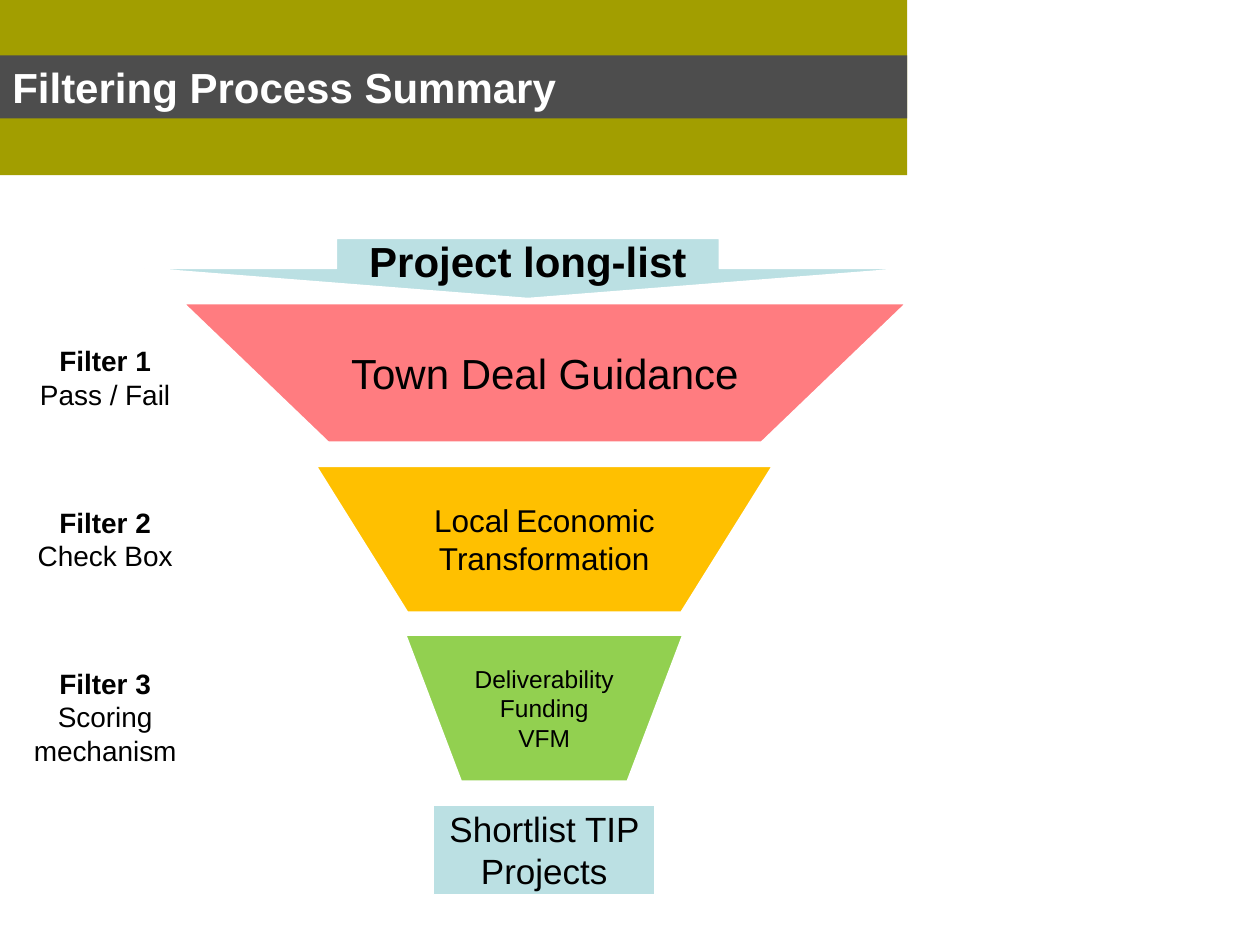
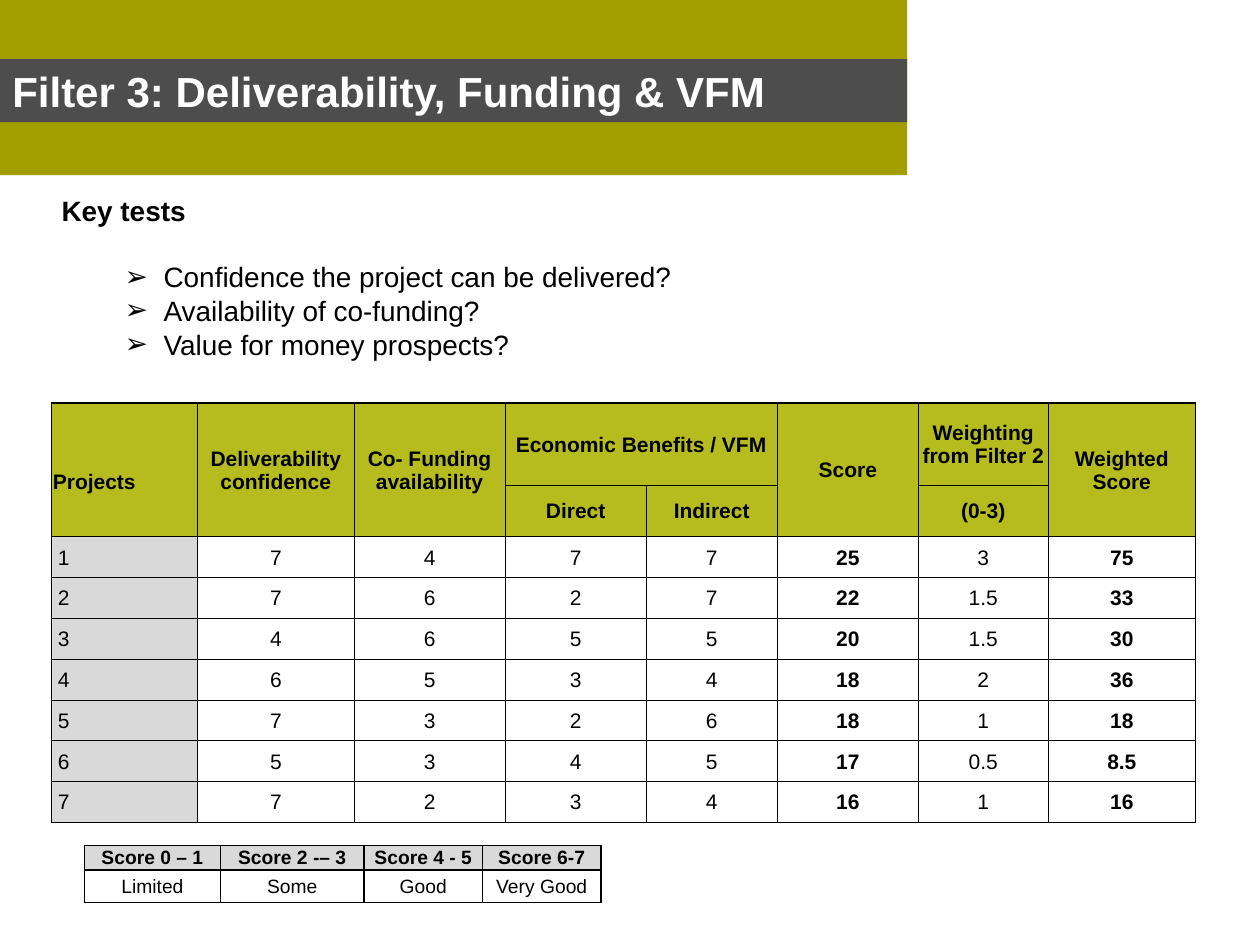
from lxml import etree
from pptx import Presentation
from pptx.dml.color import RGBColor
from pptx.enum.shapes import MSO_SHAPE
from pptx.enum.text import MSO_ANCHOR, PP_ALIGN
from pptx.oxml.ns import qn
from pptx.util import Inches, Pt

RECT, ARROW = MSO_SHAPE.RECTANGLE, MSO_SHAPE.DOWN_ARROW
FUNNEL = MSO_SHAPE.FLOWCHART_MANUAL_OPERATION
LEFT, CENTER = PP_ALIGN.LEFT, PP_ALIGN.CENTER
TOP, MIDDLE = MSO_ANCHOR.TOP, MSO_ANCHOR.MIDDLE

FONT = "Arial"
BLACK, WHITE = RGBColor(0, 0, 0), RGBColor(255, 255, 255)
OLIVE, CHARCOAL = RGBColor(0xA2, 0x9E, 0x00), RGBColor(0x4D, 0x4D, 0x4D)
PALE_BLUE, PINK = RGBColor(0xBB, 0xE0, 0xE3), RGBColor(0xFF, 0x7C, 0x80)
AMBER, GREEN = RGBColor(0xFF, 0xC0, 0x00), RGBColor(0x92, 0xD0, 0x50)
LIME, GREY = RGBColor(0xB6, 0xBC, 0x1E), RGBColor(0xD9, 0xD9, 0xD9)

SLIDE_W, SLIDE_H = 10, 7.5
BAND_W, BAND_H, TITLE_H = 0.72 * SLIDE_W, 1.39, 0.5

# Content of the funnel slide: kind, place, fill, paragraphs, size, bold
STAGES = [
    (ARROW, (1.15, 1.89, 6.08, 0.48), PALE_BLUE, ["Project long-list"], 24, True),
    (FUNNEL, (1.46, 2.41, 5.73, 1.1), PINK, ["Town Deal Guidance"], 24, False),
    (FUNNEL, (2.51, 3.7, 3.62, 1.16), AMBER,
     [[("Local", {}), (" ", {"size": 14}), ("Economic Transformation", {})]], 18, False),
    (FUNNEL, (3.22, 5.04, 2.2, 1.16), GREEN,
     ["Deliverability", "Funding", "VFM"], 14, False),
    (RECT, (3.44, 6.39, 1.76, 0.71), PALE_BLUE, ["Shortlist TIP Projects"], 20, False),
]
FILTERS = [("Filter 1", "Pass / Fail"), ("Filter 2", "Check Box"),
           ("Filter 3", "Scoring mechanism")]
FILTER_LEFT, FILTER_TOP, FILTER_PITCH = -0.23, 2.68, 1.28

# Content of the scoring slide
KEY_TESTS = ["Confidence the project can be delivered?",
             "Availability of co-funding?", "Value for money prospects?"]
SCORE_COLS = [1.16, 1.24, 1.2, 1.12, 1.04, 1.12, 1.03, 1.17]
SCORE_HEAD = [
    ["Projects", "Deliverability confidence", "Co- Funding availability",
     "Economic Benefits / VFM", "", "Score", "Weighting from Filter 2", "Weighted Score"],
    ["", "", "", "Direct", "Indirect", "", "(0-3)", ""],
]
SCORES = [
    [1, 7, 4, 7, 7, 25, 3, 75],
    [2, 7, 6, 2, 7, 22, 1.5, 33],
    [3, 4, 6, 5, 5, 20, 1.5, 30],
    [4, 6, 5, 3, 4, 18, 2, 36],
    [5, 7, 3, 2, 6, 18, 1, 18],
    [6, 5, 3, 4, 5, 17, 0.5, 8.5],
    [7, 7, 2, 3, 4, 16, 1, 16],
]
TALL_HEADS, BOLD_COLS = (0, 1, 2, 5, 7), (5, 7)
LEGEND_COLS = [1.08, 1.14, 0.94, 0.94]
LEGEND = [["Score 0 – 1", "Score 2 -– 3", "Score 4 - 5", "Score 6-7"],
          ["Limited", "Some", "Good", "Very Good"]]


def add_para(tf, text, first=False, size=16, bold=False, color=BLACK, align=LEFT,
             bullet=None, before=0):
    """Add one paragraph; text is a string or a list of (string, overrides)."""
    p = tf.paragraphs[0] if first else tf.add_paragraph()
    p.alignment = align
    if before:
        p.space_before = Pt(before)
    if bullet:
        p.level = 1
        pPr = p._p.get_or_add_pPr()
        pPr.set("marL", str(Inches(0.81)))
        pPr.set("indent", str(Inches(-0.31)))
        etree.SubElement(pPr, qn("a:buFont")).set("typeface", FONT)
        etree.SubElement(pPr, qn("a:buChar")).set("char", bullet)
    for part, extra in [(text, {})] if isinstance(text, str) else text:
        r = p.add_run()
        r.text = part
        r.font.name, r.font.bold = FONT, bold
        r.font.size = Pt(extra.get("size", size))
        r.font.color.rgb = color


def add_box(slide, kind, place, fill, paras=(), line=None, **fmt):
    sp = slide.shapes.add_shape(kind, *map(Inches, place))
    sp.shadow.inherit = False
    sp.fill.solid()
    sp.fill.fore_color.rgb = fill
    if line is None:
        sp.line.fill.background()
    else:
        sp.line.color.rgb, sp.line.width = line, Pt(1)
    sp.text_frame.vertical_anchor = MIDDLE
    for i, text in enumerate(paras):
        add_para(sp.text_frame, text, first=i == 0, **fmt)


def add_text_frame(slide, place):
    tf = slide.shapes.add_textbox(*map(Inches, place)).text_frame
    tf.word_wrap, tf.vertical_anchor = True, TOP
    return tf


def add_titled_slide(prs, title, title_top):
    slide = prs.slides.add_slide(prs.slide_layouts[6])
    add_box(slide, RECT, (0, 0, BAND_W, BAND_H), OLIVE)
    add_box(slide, RECT, (0, title_top, BAND_W, TITLE_H), CHARCOAL, [title],
            size=24, bold=True, color=WHITE)
    return slide


def set_borders(cell, **widths):
    tcPr = cell._tc.get_or_add_tcPr()
    for side in "LRTB":
        ln = etree.SubElement(tcPr, qn("a:ln" + side), w=str(Pt(widths[side])))
        solid = etree.SubElement(ln, qn("a:solidFill"))
        etree.SubElement(solid, qn("a:srgbClr"), val=str(BLACK))


def add_grid(slide, left, top, cols, heights, rows, style, inner, outer_top):
    """Draw a table; style(row, col) gives the fill and the text format."""
    frame = slide.shapes.add_table(len(rows), len(cols), Inches(left), Inches(top),
                                   Inches(sum(cols)), Inches(sum(heights)))
    table = frame.table
    table.first_row = table.horz_banding = False
    for col, width in zip(table.columns, cols):
        col.width = Inches(width)
    for i, (values, height) in enumerate(zip(rows, heights)):
        table.rows[i].height = Inches(height)
        for j, value in enumerate(values):
            cell = table.cell(i, j)
            fill, fmt = style(i, j)
            set_borders(cell, L=inner, R=inner, B=inner, T=inner if i else outer_top)
            cell.fill.solid()
            cell.fill.fore_color.rgb = fill
            cell.vertical_anchor = MIDDLE
            cell.margin_left = cell.margin_right = cell.margin_top = Inches(0.01)
            cell.margin_bottom = 0
            add_para(cell.text_frame, str(value), first=True, **fmt)
    return table


def score_style(i, j):
    head = i < len(SCORE_HEAD)
    fill = LIME if head else WHITE if j else GREY
    return fill, dict(size=12, bold=head or j in BOLD_COLS, align=CENTER if j else LEFT)


def legend_style(i, j):
    return WHITE if i else GREY, dict(size=11, bold=i == 0, align=CENTER)


def build_funnel(prs):
    slide = add_titled_slide(prs, "Filtering Process Summary", 0.44)
    for kind, place, fill, paras, size, bold in STAGES:
        add_box(slide, kind, place, fill, paras, line=WHITE, size=size, bold=bold,
                align=CENTER)
    for i, (name, method) in enumerate(FILTERS):
        top = FILTER_TOP + i * FILTER_PITCH
        tf = add_text_frame(slide, (FILTER_LEFT, top, 2.13, 0.64))
        add_para(tf, name, first=True, bold=True, align=CENTER)
        add_para(tf, method, align=CENTER)


def build_scoring(prs):
    slide = add_titled_slide(prs, "Filter 3: Deliverability, Funding & VFM", 0.47)

    # Key tests
    tf = add_text_frame(slide, (0.39, 1.49, 7.32, 1.45))
    add_para(tf, "Key tests", first=True, bold=True)
    for i, test in enumerate(KEY_TESTS):
        add_para(tf, test, bullet="➢", before=0 if i else 18.5)

    # Project scores
    heights = [0.65, 0.4] + [0.324] * len(SCORES)
    table = add_grid(slide, 0.41, 3.2, SCORE_COLS, heights, SCORE_HEAD + SCORES,
                     score_style, inner=0.5, outer_top=1)
    for j in TALL_HEADS:
        table.cell(0, j).merge(table.cell(1, j))
    table.cell(0, 3).merge(table.cell(0, 4))
    table.cell(0, 0).margin_top = Inches(0.2)
    for i in range(len(SCORES)):
        table.cell(i + len(SCORE_HEAD), 0).margin_left = Inches(0.05)

    # Meaning of the scores
    add_grid(slide, 0.67, 6.71, LEGEND_COLS, [0.19, 0.26], LEGEND, legend_style,
             inner=1, outer_top=1)


def main():
    prs = Presentation()
    prs.slide_width, prs.slide_height = Inches(SLIDE_W), Inches(SLIDE_H)
    build_funnel(prs)
    build_scoring(prs)
    prs.save("out.pptx")


if __name__ == "__main__":
    main()
